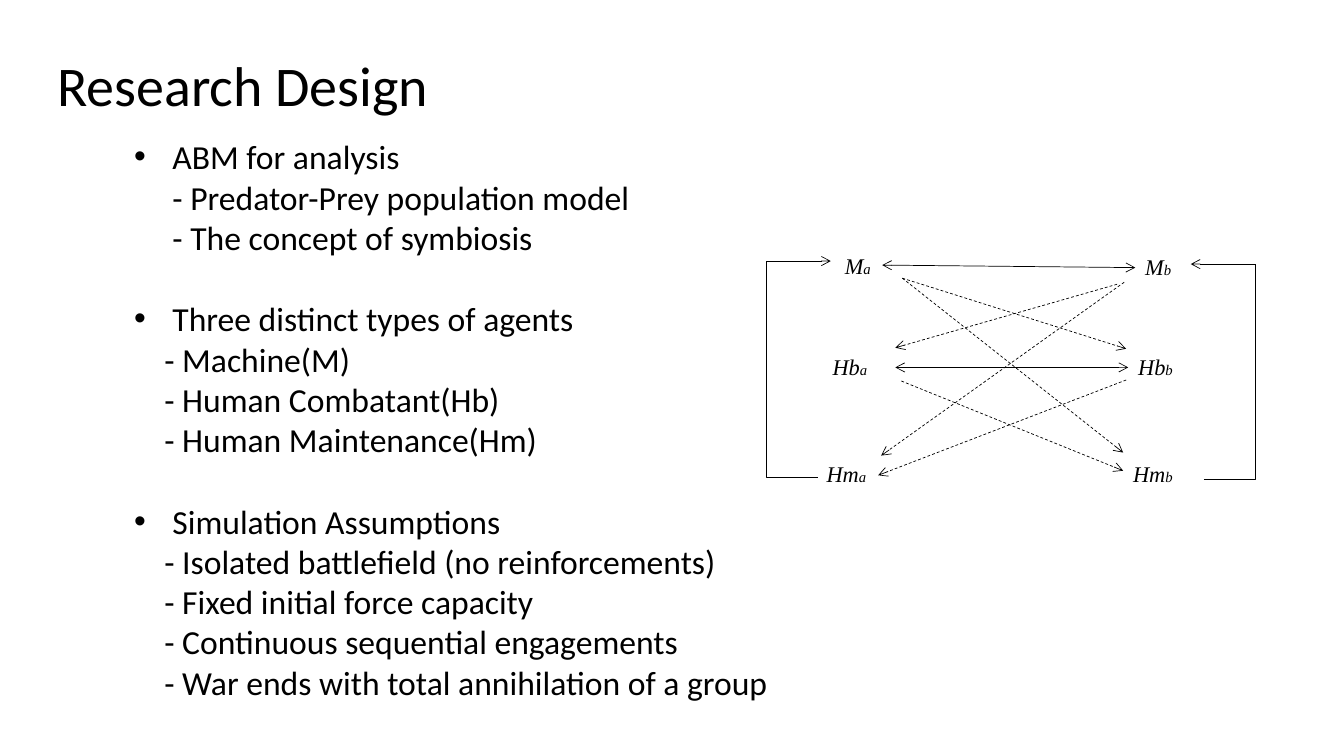
from lxml import etree
from pptx import Presentation
from pptx.dml.color import RGBColor
from pptx.enum.dml import MSO_LINE
from pptx.enum.shapes import MSO_CONNECTOR
from pptx.enum.text import MSO_ANCHOR, MSO_AUTO_SIZE, PP_ALIGN
from pptx.oxml.ns import qn
from pptx.util import Inches, Pt

STRAIGHT, ELBOW = MSO_CONNECTOR.STRAIGHT, MSO_CONNECTOR.ELBOW
DASH, TOP, LEFT = MSO_LINE.DASH, MSO_ANCHOR.TOP, PP_ALIGN.LEFT
NO_AUTOFIT = MSO_AUTO_SIZE.NONE
LEFT_SIDE, RIGHT_SIDE = 1, 3

TITLE = "Research Design"
TITLE_BOX = (0.47, 0.45, 3.92, 0.77)
BODY_BOX = (1.23, 1.3, 11.35, 5.76)
BULLET_INDENT = 0.38
# heading, indent of its sub-items in inches, sub-items
SECTIONS = [
    ("ABM for analysis", 0.38,
     ["Predator-Prey population model", "The concept of symbiosis"]),
    ("Three distinct types of agents", 0.3,
     ["Machine(M)", "Human Combatant(Hb)", "Human Maintenance(Hm)"]),
    ("Simulation Assumptions", 0.3,
     ["Isolated battlefield (no reinforcements)", "Fixed initial force capacity",
      "Continuous sequential engagements",
      "War ends with total annihilation of a group"]),
]

AGENT_HEIGHT = 0.39
# (agent, group): left, top, width
AGENTS = {
    ("M", "a"): (8.28, 2.45, 0.62),
    ("Hb", "a"): (8.16, 3.45, 0.72),
    ("Hm", "a"): (8.1, 4.52, 0.61),
    ("M", "b"): (11.26, 2.46, 0.62),
    ("Hb", "b"): (11.19, 3.45, 0.72),
    ("Hm", "b"): (11.14, 4.52, 0.78),
}
# from, to, agent joined at the start, agent joined at the end
RIVALRIES = [
    ((8.88, 3.64), (11.19, 3.64), ("Hb", "a"), ("Hb", "b")),
    ((8.75, 2.63), (11.26, 2.65), None, ("M", "b")),
]
ATTACKS = [
    ((11.08, 2.82), (8.88, 3.45), None),
    ((11.17, 3.77), (8.71, 4.71), ("Hm", "a")),
    ((11.15, 2.8), (8.74, 4.52), None),
    ((8.95, 2.76), (11.17, 3.46), None),
    ((8.95, 2.76), (11.14, 4.49), None),
    ((8.94, 3.78), (11.14, 4.67), None),
]
# maintenance end, corner above it, machine end
SUPPORT_LOOPS = [
    ((8.11, 4.74), (7.6, 2.59), (8.24, 2.59)),
    ((11.94, 4.76), (12.45, 2.62), (11.81, 2.62)),
]

THEME = {
    "ink": RGBColor(0, 0, 0),
    "line": Pt(0.5),
    "title": {"name": "Calibri", "size": Pt(40)},
    "body": {"name": "Calibri", "size": Pt(24)},
    "agent": {"name": "Times New Roman", "size": Pt(16), "italic": True},
    "group": {"name": "Times New Roman", "size": Pt(10.5), "italic": True},
    "section_gap": Pt(29.3),
}


def format_font(font, style):
    for name, value in THEME[style].items():
        setattr(font, name, value)
    font.color.rgb = THEME["ink"]


def place(shape, box):
    for name, value in zip(("left", "top", "width", "height"), box):
        setattr(shape, name, Inches(value))
    frame_format = {"auto_size": NO_AUTOFIT, "vertical_anchor": TOP, "word_wrap": True}
    for name, value in frame_format.items():
        setattr(shape.text_frame, name, value)


def set_indent(paragraph, margin, bulleted):
    properties = paragraph._p.get_or_add_pPr()
    properties.set("marL", str(Inches(margin)))
    properties.set("indent", str(-Inches(margin) if bulleted else 0))
    if bulleted:
        etree.SubElement(properties, qn("a:buFont"), typeface="Arial")
        etree.SubElement(properties, qn("a:buChar"), char="•")
    else:
        etree.SubElement(properties, qn("a:buNone"))


def fill_body(frame):
    lines = []
    for heading, indent, items in SECTIONS:
        lines.append((heading, BULLET_INDENT, True))
        lines += [("- " + item, indent, False) for item in items]
    for index, (text, margin, bulleted) in enumerate(lines):
        paragraph = frame.add_paragraph() if index else frame.paragraphs[0]
        paragraph.text = text
        set_indent(paragraph, margin, bulleted)
        paragraph.alignment = LEFT
        paragraph.line_spacing = 1.0
        paragraph.space_before = THEME["section_gap"] if bulleted and index else Pt(0)
        format_font(paragraph.font, "body")


def add_agent(shapes, agent, group, box):
    label = shapes.add_textbox(0, 0, 0, 0)
    place(label, (*box, AGENT_HEIGHT))
    paragraph = label.text_frame.paragraphs[0]
    for text, style in ((agent, "agent"), (group, "group")):
        run = paragraph.add_run()
        run.text = text
        format_font(run.font, style)
    return label


def add_line(shapes, start, end, kind=STRAIGHT, dashed=False, arrows=()):
    """Arrows names the ends that carry a head: headEnd is the start, tailEnd the end."""
    connector = shapes.add_connector(kind, *map(Inches, start + end))
    connector.line.color.rgb = THEME["ink"]
    connector.line.width = THEME["line"]
    if dashed:
        connector.line.dash_style = DASH
    properties = connector._element.spPr
    for arrow in arrows:
        etree.SubElement(properties.find(qn("a:ln")), qn("a:" + arrow), type="arrow")
    etree.SubElement(properties, qn("a:effectLst"))
    if kind == ELBOW:
        properties.find(qn("a:prstGeom")).set("prst", "bentConnector2")
    return connector


def main():
    presentation = Presentation()
    presentation.slide_width, presentation.slide_height = Inches(13.33), Inches(7.5)
    slide = presentation.slides.add_slide(presentation.slide_layouts[1])
    shapes = slide.shapes

    title, body = shapes.title, slide.placeholders[1]
    place(title, TITLE_BOX)
    title.text_frame.word_wrap = False
    title.text_frame.text = TITLE
    title_paragraph = title.text_frame.paragraphs[0]
    title_paragraph.alignment = LEFT
    format_font(title_paragraph.font, "title")
    place(body, BODY_BOX)
    fill_body(body.text_frame)

    labels = {key: add_agent(shapes, *key, box) for key, box in AGENTS.items()}
    for start, end, source, target in RIVALRIES:
        line = add_line(shapes, start, end, arrows=("headEnd", "tailEnd"))
        if source:
            line.begin_connect(labels[source], RIGHT_SIDE)
        line.end_connect(labels[target], LEFT_SIDE)
    for start, end, target in ATTACKS:
        line = add_line(shapes, start, end, dashed=True, arrows=("tailEnd",))
        if target:
            line.end_connect(labels[target], RIGHT_SIDE)
    for maintenance, corner, machine in SUPPORT_LOOPS:
        add_line(shapes, maintenance, corner, kind=ELBOW)
        add_line(shapes, corner, machine, arrows=("tailEnd",))

    presentation.save("out.pptx")


if __name__ == "__main__":
    main()
